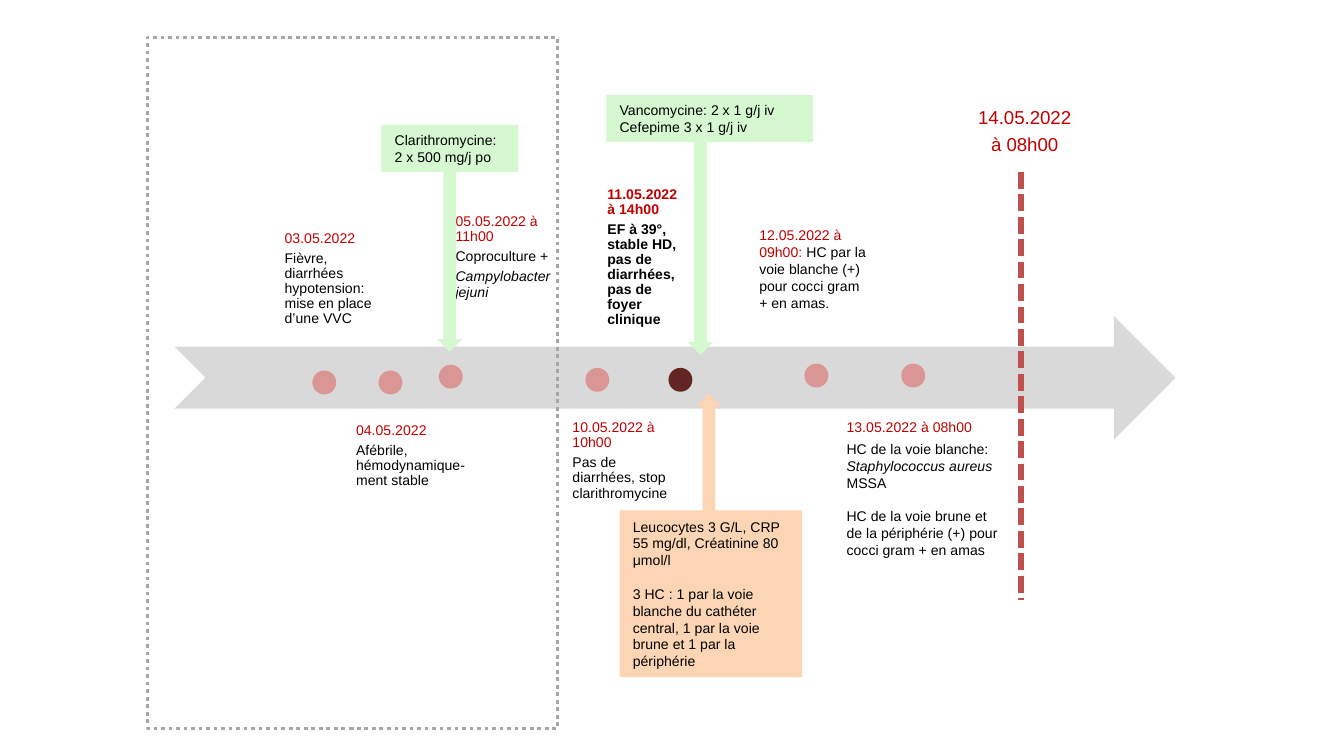
from dataclasses import dataclass

from lxml import etree
from pptx import Presentation
from pptx.dml.color import RGBColor
from pptx.enum.dml import MSO_LINE
from pptx.enum.shapes import MSO_CONNECTOR, MSO_SHAPE
from pptx.enum.text import MSO_ANCHOR, PP_ALIGN
from pptx.oxml.ns import qn
from pptx.util import Cm, Pt

RECTANGLE, OVAL = MSO_SHAPE.RECTANGLE, MSO_SHAPE.OVAL
DOWN_ARROW, NOTCHED_ARROW = MSO_SHAPE.DOWN_ARROW, MSO_SHAPE.NOTCHED_RIGHT_ARROW
TOP, MIDDLE, BOTTOM = MSO_ANCHOR.TOP, MSO_ANCHOR.MIDDLE, MSO_ANCHOR.BOTTOM
LEFT, CENTER = PP_ALIGN.LEFT, PP_ALIGN.CENTER
SYS_DOT, SYS_DASH = MSO_LINE.ROUND_DOT, MSO_LINE.SQUARE_DOT


@dataclass(frozen=True)
class Theme:
    font: str = "Arial"
    body: float = 7.5
    heading: float = 10
    text: str = "000000"
    date: str = "C00000"
    timeline: str = "D9D9D9"
    event: str = "D99694"
    key_event: str = "632523"
    treatment: str = "D5F8D0"
    lab: str = "FCD5B5"
    cutoff: str = "C0504D"
    frame: str = "A6A6A6"


theme = Theme()

# Paragraph and run formats
PLAIN = {"alignment": LEFT}
TIGHT = {"alignment": LEFT, "line_spacing": 0.9, "space_after": Pt(2.6)}
AFTER_GAP = {"alignment": LEFT, "space_before": Pt(9)}
HEADING = {"alignment": CENTER, "line_spacing": 0.9, "space_after": Pt(3.5)}
NORMAL, BOLD, ITALIC = {}, {"bold": True}, {"italic": True}


def write(frame, paragraphs, size=theme.body, anchor=TOP, inset=None):
    """Fill a frame with (paragraph format, [(text, colour, run format)])."""
    frame.word_wrap = True
    frame.vertical_anchor = anchor
    if inset is not None:
        for side in ("left", "right", "top", "bottom"):
            setattr(frame, f"margin_{side}", inset)
    for index, (layout, runs) in enumerate(paragraphs):
        paragraph = frame.add_paragraph() if index else frame.paragraphs[0]
        for name, value in layout.items():
            setattr(paragraph, name, value)
        for text, color, style in runs:
            run = paragraph.add_run()
            run.text = text
            run.font.color.rgb = RGBColor.from_string(color)
            for name, value in {"name": theme.font, "size": Pt(size), **style}.items():
                setattr(run.font, name, value)


def add_block(preset, box, fill=None, line=None):
    """Add a preset shape; box is left, top, width, height in cm."""
    block = slide.shapes.add_shape(preset, *map(Cm, box))
    block.shadow.inherit = False
    if fill:
        block.fill.solid()
        block.fill.fore_color.rgb = RGBColor.from_string(fill)
    else:
        block.fill.background()
    if line:
        block.line.color.rgb = RGBColor.from_string(line)
        block.line.width = Pt(2)
    else:
        block.line.fill.background()
    return block


presentation = Presentation()
presentation.slide_width, presentation.slide_height = Cm(25.4), Cm(14.29)
slide = presentation.slides.add_slide(presentation.slide_layouts[6])

# Timeline
add_block(NOTCHED_ARROW, (3.3, 5.97, 18.92, 2.34), theme.timeline)

# Event dots
events = [
    (5.94, 7.04, theme.event),
    (7.19, 7.04, theme.event),
    (8.33, 6.93, theme.event),
    (11.1, 6.99, theme.event),
    (12.67, 6.99, theme.key_event),
    (15.24, 6.91, theme.event),
    (17.07, 6.91, theme.event),
]
for left, top, color in events:
    add_block(OVAL, (left, top, 0.38, 0.38), color, color)

# Event captions: box, anchor, date, date style, following paragraphs
captions = [
    ((5.23, 4.22, 2.16, 2.21), TOP, "03.05.2022", NORMAL, [
        (TIGHT, [("Fièvre, diarrhées hypotension: mise en place d’une VVC",
                  theme.text, NORMAL)])]),
    ((6.58, 7.85, 2.42, 2.01), TOP, "04.05.2022", NORMAL, [
        (TIGHT, [("Afébrile, hémodynamique-ment stable", theme.text, NORMAL)])]),
    ((8.46, 3.91, 2.39, 2.06), TOP, "05.05.2022 à 11h00", NORMAL, [
        (TIGHT, [("Coproculture +", theme.text, NORMAL)]),
        (TIGHT, [("Campylobacter jejuni", theme.text, ITALIC)])]),
    ((10.67, 7.8, 2.13, 2.34), TOP, "10.05.2022 à 10h00", NORMAL, [
        (TIGHT, [("Pas de diarrhées, stop clarithromycine", theme.text, NORMAL)])]),
    ((11.33, 3.56, 1.7, 2.79), BOTTOM, "11.05.2022 à 14h00", BOLD, [
        (TIGHT, [("EF à 39°, stable HD, pas de diarrhées, pas de foyer clinique",
                  theme.text, BOLD)])]),
    ((15.85, 7.8, 3.25, 3.4), TOP, "13.05.2022 à 08h00", NORMAL, [
        (PLAIN, [("HC de la voie blanche:", theme.text, NORMAL)]),
        (PLAIN, [("Staphylococcus aureus ", theme.text, ITALIC),
                 ("MSSA", theme.text, NORMAL)]),
        (AFTER_GAP, [("HC de la voie brune et de la périphérie (+) pour "
                      "cocci gram + en amas", theme.text, NORMAL)])]),
]
for box, anchor, date, date_style, details in captions:
    caption = slide.shapes.add_textbox(*map(Cm, box))
    dated = [(TIGHT, [(date, theme.date, date_style)]), *details]
    write(caption.text_frame, dated, anchor=anchor, inset=Cm(0.15))

# Caption with date and finding in one paragraph
blood_culture = slide.shapes.add_textbox(Cm(14.2), Cm(4.14), Cm(2.39), Cm(2.34))
write(blood_culture.text_frame, [
    (PLAIN, [("12.05.2022 à 09h00: ", theme.date, NORMAL),
             ("HC par la voie blanche (+) pour cocci gram + en amas.",
              theme.text, NORMAL)])], inset=Cm(0.15))

# Treatments and lab results: arrow, rotation, box, colour, paragraphs
interventions = [
    ((8.26, 2.74, 0.48, 3.91), 0, (7.21, 2.36, 2.59, 0.89), theme.treatment,
     [(PLAIN, "Clarithromycine: 2 x 500 mg/j po")]),
    ((13, 2.67, 0.48, 4.04), 0, (11.46, 1.8, 3.91, 0.89), theme.treatment,
     [(PLAIN, "Vancomycine: 2 x 1 g/j iv"), (PLAIN, "Cefepime 3 x 1 g/j iv")]),
    ((13.16, 7.44, 0.48, 2.39), 180, (11.71, 9.65, 3.45, 3.15), theme.lab,
     [(PLAIN, "Leucocytes 3 G/L, CRP 55 mg/dl, Créatinine 80 μmol/l"),
      (AFTER_GAP, "3 HC : 1 par la voie blanche du cathéter central, "
                  "1 par la voie brune et 1 par la périphérie")]),
]
for pointer, rotation, box, color, lines in interventions:
    add_block(DOWN_ARROW, pointer, color).rotation = rotation
    note = add_block(RECTANGLE, box, color)
    write(note.text_frame,
          [(layout, [(text, theme.text, NORMAL)]) for layout, text in lines],
          anchor=MIDDLE)

# Cut-off line with its date
cutoff = slide.shapes.add_connector(
    MSO_CONNECTOR.STRAIGHT, Cm(19.3), Cm(3.25), Cm(19.3), Cm(11.35))
cutoff.line.color.rgb = RGBColor.from_string(theme.cutoff)
cutoff.line.width = Pt(3)
cutoff.line.dash_style = SYS_DASH
etree.SubElement(cutoff._element.spPr, qn("a:effectLst"))

# Dotted frame around the first episode
episode = add_block(RECTANGLE, (2.79, 0.71, 7.75, 13.06), line=theme.frame)
episode.line.dash_style = SYS_DOT

cutoff_date = slide.shapes.add_textbox(Cm(17.75), Cm(1.93), Cm(3.23), Cm(1.17))
write(cutoff_date.text_frame,
      [(HEADING, [(text, theme.date, NORMAL)]) for text in ("14.05.2022", "à 08h00")],
      size=theme.heading)

presentation.save("out.pptx")
